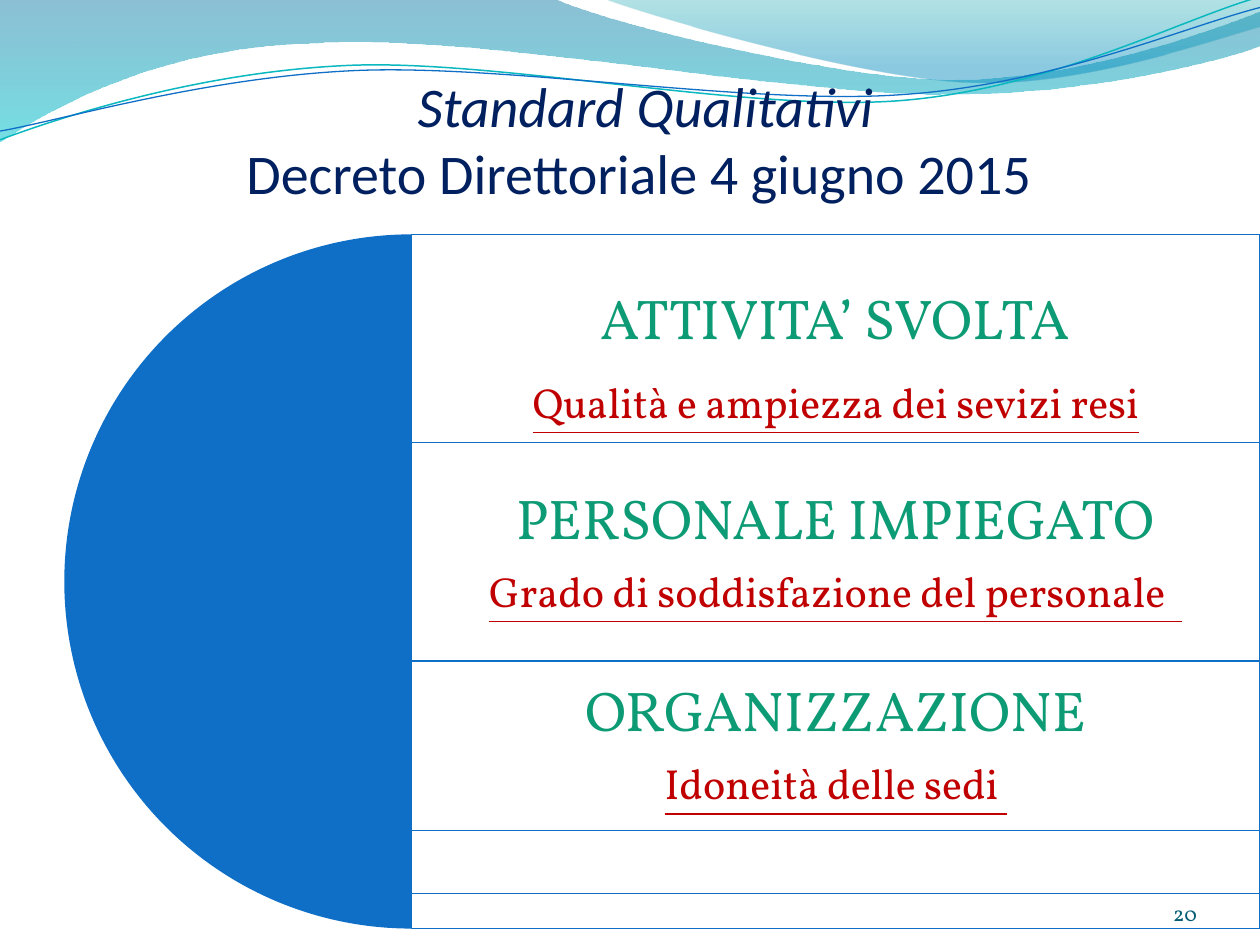
from math import cos, radians, sin

from lxml import etree
from pptx import Presentation
from pptx.dml.color import RGBColor
from pptx.enum.shapes import MSO_SHAPE
from pptx.enum.text import MSO_ANCHOR, MSO_AUTO_SIZE, PP_ALIGN
from pptx.oxml.ns import qn
from pptx.util import Pt

PIE, RECTANGLE = MSO_SHAPE.PIE, MSO_SHAPE.RECTANGLE
TOP, MIDDLE, BOTTOM = MSO_ANCHOR.TOP, MSO_ANCHOR.MIDDLE, MSO_ANCHOR.BOTTOM
CENTER, RIGHT = PP_ALIGN.CENTER, PP_ALIGN.RIGHT
NO_AUTOFIT = MSO_AUTO_SIZE.NONE

COLORS = {
    "blue": "0F6FC6", "teal": "0AB8BF", "white": "FFFFFF", "navy": "002060",
    "green": "0C9B74", "red": "C00000", "number": "045D75",
    "wave_top": "0074A1", "wave_bottom": "00C6CF",
    "crest_top": "00A1A9", "crest_bottom": "008BBF",
}
TITLE_FONT, BODY_FONT = "Calibri", "Vollkorn"
TILT = 2.7

WAVE = [
    (0, 0), (316.8, -0.7),
    (342.7, 12.2, 478.1, 45.4, 545.8, 45.4), (614.2, 45.4, 689.8, 18.7, 720, 6.5),
    (720.7, 25.9),
    (707.8, 31.7, 626.4, 54.7, 537.1, 54), (447.8, 54, 275, 20.2, 185, 24.5),
    (92.9, 25.9, 33.1, 59.8, -0.7, 81.4),
]
CREST = [
    (344.9, -0.7),
    (366.5, 7.9, 491, 44.6, 553.7, 46.8), (616.3, 49.7, 691.9, 23, 720, 15.1),
    (720, 0),
]
TEAL_LINE = [
    (0, 79.9),
    (34.6, 67, 113.8, 41, 199.4, 37.4), (284.4, 33.8, 427, 64.1, 513.4, 57.6),
    (599.8, 51.1, 675.4, 10.8, 718.6, -1.4),
]
BLUE_LINE = [
    (0, 74.9),
    (33.8, 69.1, 118.1, 43.9, 203.8, 40.3), (290.2, 36.7, 429.8, 60.5, 516.2, 54),
    (601.9, 48.2, 677.5, 15.1, 720, 4.3),
]


def color(name):
    return RGBColor.from_string(COLORS[name])


def set_alpha(shape, percents):
    for node, percent in zip(shape._element.spPr.iter(qn("a:srgbClr")), percents):
        etree.SubElement(node, qn("a:alpha")).set("val", str(percent * 1000))


def tilt(segments, center_x, center_y):
    cosine, sine = cos(radians(TILT)), sin(radians(TILT))
    return [
        tuple(value
              for x, y in zip(segment[::2], segment[1::2])
              for value in (center_x + (x - center_x) * cosine - (y - center_y) * sine,
                            center_y + (x - center_x) * sine + (y - center_y) * cosine))
        for segment in segments
    ]


def add_outline(page, segments, closed):
    knots = [(Pt(segment[-2]), Pt(segment[-1])) for segment in segments]
    builder = page.shapes.build_freeform(*knots[0])
    builder.add_line_segments(knots[1:], close=closed)
    shape = builder.convert_to_shape()
    shape.shadow.inherit = False
    lines = list(shape._element.spPr.iter(qn("a:lnTo")))
    for line, segment in zip(lines, segments[1:]):
        if len(segment) == 6:
            line.tag = qn("a:cubicBezTo")
            controls = zip(segment[:4:2], segment[1:4:2])
            for index, (x, y) in enumerate(controls):
                point = etree.Element(qn("a:pt"))
                point.set("x", str(Pt(x) - shape.left))
                point.set("y", str(Pt(y) - shape.top))
                line.insert(index, point)
    return shape


def add_waves(page):
    bands = [
        (WAVE, [(0, "wave_top", 45), (1, "wave_bottom", 55)]),
        (CREST, [(0, "crest_top", 30), (0.8, "crest_bottom", 45)]),
    ]
    for segments, stops in bands:
        band = add_outline(page, segments, True)
        band.line.fill.background()
        band.fill.gradient()
        band.fill.gradient_angle = 270
        for stop, (position, name, _) in zip(band.fill.gradient_stops, stops):
            stop.position = position
            stop.color.rgb = color(name)
        set_alpha(band, [alpha for _, _, alpha in stops])
    curves = [(TEAL_LINE, 41.4, "teal", 0.85), (BLUE_LINE, 42.5, "blue", 0.75)]
    for segments, center_y, name, width in curves:
        curve = add_outline(page, tilt(segments, 359.6, center_y), False)
        curve.rotation = -TILT
        curve.fill.background()
        curve.line.color.rgb = color(name)
        curve.line.width = Pt(width)


def add_span(para, text, font, size, name):
    span = para.add_run()
    span.text = text
    span.font.name = font
    span.font.size = Pt(size)
    span.font.color.rgb = color(name)
    return span


def set_frame(frame, anchor, inset):
    frame.word_wrap = True
    frame.auto_size = NO_AUTOFIT
    frame.vertical_anchor = anchor
    frame.margin_left = frame.margin_right = Pt(inset)
    frame.margin_top = frame.margin_bottom = Pt(inset)


def add_title(page, left, top, width, height):
    title = page.shapes.title
    title._element.getparent().append(title._element)
    title.left, title.top, title.width, title.height = map(Pt, (left, top, width, height))
    set_frame(title.text_frame, TOP, 7.2)
    title.text_frame.margin_top = Pt(20)
    para = title.text_frame.paragraphs[0]
    para.alignment = CENTER
    add_span(para, "Standard Qualitativi", TITLE_FONT, 32, "navy").font.italic = True
    para.add_line_break()
    add_span(para, "Decreto Direttoriale 4 giugno 2015 ", TITLE_FONT, 32, "navy")


def add_shape(page, kind, left, top, width, height, fill):
    shape = page.shapes.add_shape(kind, Pt(left), Pt(top), Pt(width), Pt(height))
    shape.shadow.inherit = False
    shape.fill.solid()
    shape.fill.fore_color.rgb = color(fill)
    return shape


def add_standard(page, left, width, pie, panel, label, texts, line_spacing, gap, drop):
    pie_top, diameter = pie
    half = add_shape(page, PIE, left - diameter / 2, pie_top, diameter, diameter, "blue")
    half.adjustments[0], half.adjustments[1] = 54, 162
    half.line.fill.background()

    panel_top, panel_height = panel
    sheet = add_shape(page, RECTANGLE, left, panel_top, width, panel_height, "white")
    set_alpha(sheet, [90])
    sheet.line.color.rgb = color("blue")
    sheet.line.width = Pt(0.75)

    label_top, label_height = label
    box = page.shapes.add_textbox(Pt(left), Pt(label_top), Pt(width), Pt(label_height))
    set_frame(box.text_frame, MIDDLE, 9.4)
    box.text_frame.margin_top = Pt(9.4 + drop)
    heading = box.text_frame.paragraphs[0]
    detail = box.text_frame.add_paragraph()
    for para in (heading, detail):
        para.alignment = CENTER
        para.line_spacing = line_spacing
        para.space_after = Pt(gap)
    add_span(heading, texts[0], BODY_FONT, 32, "green")
    add_span(detail, texts[1], BODY_FONT, 24, "red").font.underline = True


def add_standards(page, left, top, width):
    step = 119
    first, second, third = top, top + step, top + 2 * step
    rows = [
        ((first, 396.7), (first, 396.7), (first, step),
         ("ATTIVITA’ SVOLTA", "Qualità e ampiezza dei sevizi resi"), 1.5, 0, 0),
        ((second, 257.8), (second, 257.8), (second, step),
         ("PERSONALE IMPIEGATO", "Grado di soddisfazione del personale  "), 0.9, 11, 8),
        ((third, step), (377.7, 97), (377.7, 97),
         ("ORGANIZZAZIONE", "Idoneità delle sedi "), 0.9, 11, 0),
    ]
    for row in rows:
        add_standard(page, left, width, *row)


def add_page_number(page, left, top, width, height):
    box = page.shapes.add_textbox(Pt(left), Pt(top), Pt(width), Pt(height))
    set_frame(box.text_frame, BOTTOM, 0)
    para = box.text_frame.paragraphs[0]
    para.alignment = RIGHT
    add_span(para, "20", BODY_FONT, 12, "number")


def main():
    deck = Presentation()
    deck.slide_width, deck.slide_height = Pt(720), Pt(540)
    page = deck.slides.add_slide(deck.slide_layouts[5])
    add_waves(page)
    add_standards(page, 235.1, 133.9, 484.9)
    add_title(page, 19, 20.9, 699.8, 118.8)
    add_page_number(page, 624.2, 500.4, 59.8, 28.8)
    deck.save("out.pptx")


if __name__ == "__main__":
    main()
